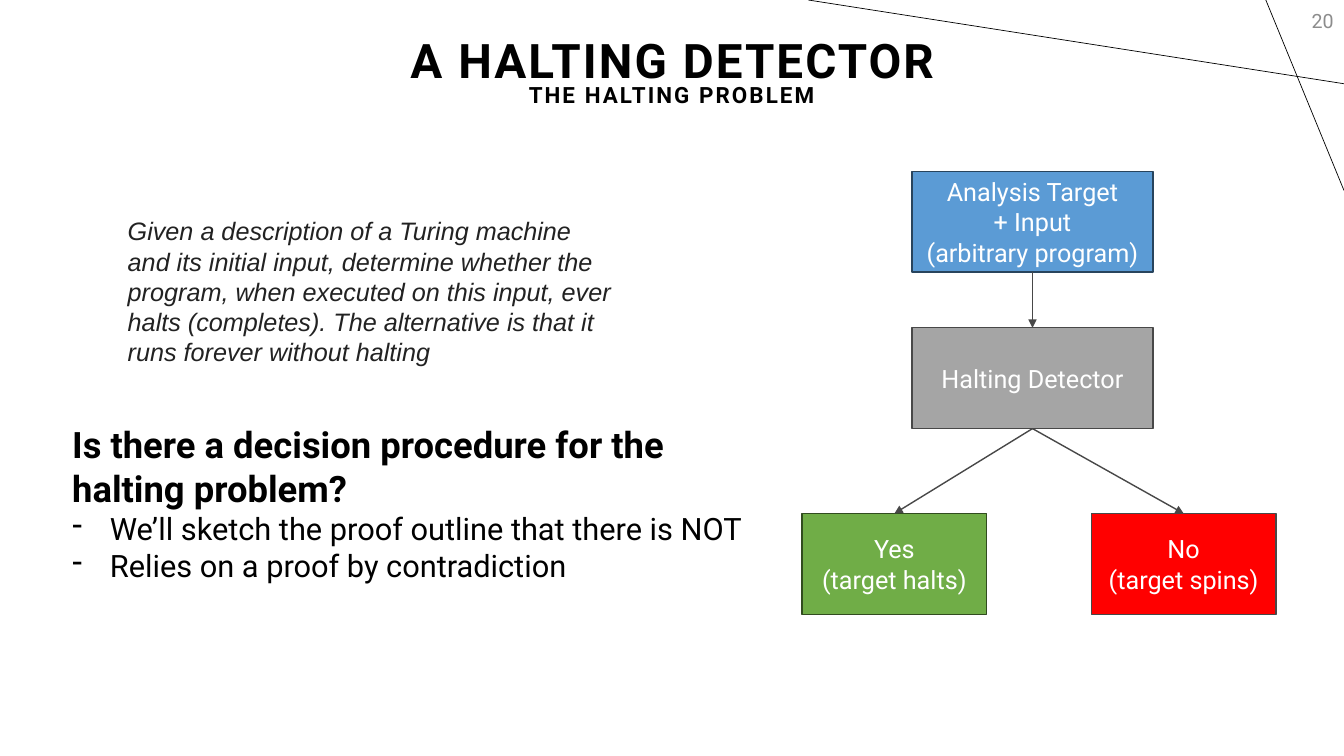
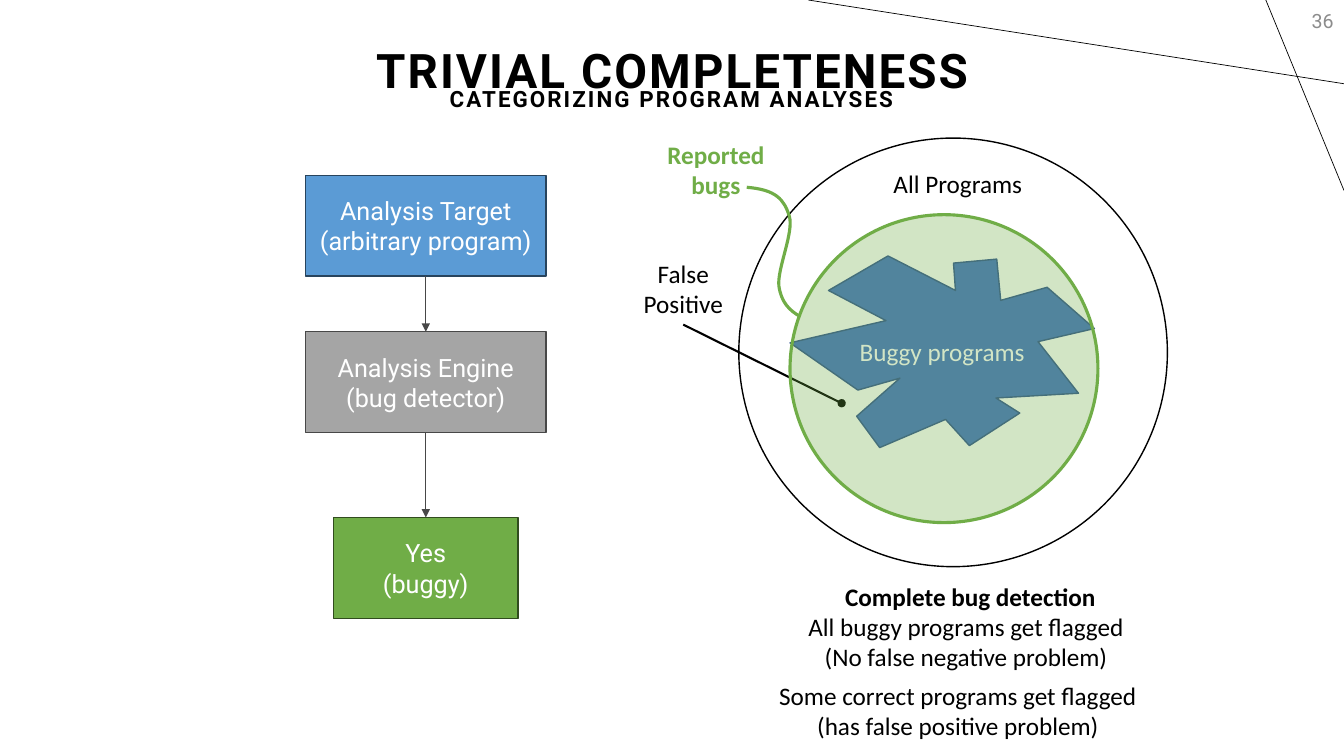
from dataclasses import dataclass

import lxml.etree
import pptx
import pptx.dml.color
import pptx.enum.shapes
import pptx.enum.text
import pptx.oxml.ns
import pptx.shapes.autoshape
import pptx.shapes.base
import pptx.shapes.connector
import pptx.slide
import pptx.text.text
import pptx.util

Cm = pptx.util.Cm
Pt = pptx.util.Pt
RGBColor = pptx.dml.color.RGBColor
Shape = pptx.shapes.autoshape.Shape
Connector = pptx.shapes.connector.Connector
Slide = pptx.slide.Slide
MSO_SHAPE = pptx.enum.shapes.MSO_SHAPE
ANCHOR = pptx.enum.text.MSO_ANCHOR
ALIGN = pptx.enum.text.PP_ALIGN
qn = pptx.oxml.ns.qn

# Colours
BLACK = RGBColor(0x00, 0x00, 0x00)
WHITE = RGBColor(0xFF, 0xFF, 0xFF)
NUMBER_GRAY = RGBColor(0x8C, 0x8C, 0x8C)
QUOTE_GRAY = RGBColor(0x22, 0x22, 0x22)
DARK_GRAY = RGBColor(0x48, 0x48, 0x48)
GRAY = RGBColor(0xA5, 0xA5, 0xA5)
BLUE = RGBColor(0x5B, 0x9B, 0xD5)
DARK_BLUE = RGBColor(0x28, 0x44, 0x5D)
GREEN = RGBColor(0x70, 0xAD, 0x47)
DARK_GREEN = RGBColor(0x31, 0x4C, 0x1F)
RED = RGBColor(0xFF, 0x00, 0x00)
BUG_BLUE = RGBColor(0x44, 0x72, 0xC4)
BUG_EDGE = RGBColor(0x32, 0x54, 0x91)

# Shared measures, in centimetres
PAGE_WIDTH, PAGE_HEIGHT = 33.87, 19.05
CORNER_LINES = [(33.87, 2.11, 20.37, 0), (31.9, 0, 33.87, 4.8)]
WIDE, NARROW, BOX_HEIGHT = 6.07, 4.65, 2.54
ROW_OFFSETS = (0, 3.94, 8.62)
BULLET_INDENT = 0.95

Point = tuple[float, float]


@dataclass(frozen=True)
class TextStyle:
    size: float
    font: str = "Roboto"
    color: RGBColor = BLACK
    bold: bool = False
    italic: bool = False
    align: ALIGN = ALIGN.LEFT
    spacing: float = 0
    line_spacing: float | None = None
    bullet: str = ""


@dataclass(frozen=True)
class BoxKind:
    fill: RGBColor
    edge: RGBColor
    width: float
    row: int


@dataclass(frozen=True)
class Label:
    left: float
    top: float
    width: float
    lines: tuple[str, ...]
    style: TextStyle


TITLE = TextStyle(34, bold=True, align=ALIGN.CENTER, spacing=1.5, line_spacing=0.9)
SUBTITLE = TextStyle(16, bold=True, align=ALIGN.CENTER, spacing=1.5, line_spacing=0.9)
NUMBER = TextStyle(14, color=NUMBER_GRAY, align=ALIGN.RIGHT)
BOX_TEXT = TextStyle(18, color=WHITE, align=ALIGN.CENTER)
QUOTE = TextStyle(18, "Arial", QUOTE_GRAY, italic=True)
QUESTION = TextStyle(26, bold=True)
ANSWER = TextStyle(22, bullet="-")
NOTE = TextStyle(18, "Calibri", align=ALIGN.CENTER)
NOTE_BOLD = TextStyle(18, "Calibri", bold=True, align=ALIGN.CENTER)
NOTE_GREEN = TextStyle(18, "Calibri", GREEN, bold=True, align=ALIGN.CENTER)
BUG_TEXT = TextStyle(18, "Calibri", WHITE, align=ALIGN.CENTER)

TARGET = BoxKind(BLUE, DARK_BLUE, WIDE, 0)
DETECTOR = BoxKind(GRAY, DARK_GRAY, WIDE, 1)
YES = BoxKind(GREEN, DARK_GREEN, NARROW, 2)
NO = BoxKind(RED, DARK_GRAY, NARROW, 2)

# Content of the program diagram
LABELS = [
    Label(22.25, 4.11, 3.78, ("All Programs",), NOTE),
    Label(20.96, 14.53, 6.99, ("Complete bug detection",), NOTE_BOLD),
    Label(16.56, 3.38, 2.97, ("Reported", "bugs"), NOTE_GREEN),
    Label(19.99, 15.27, 8.71,
          ("All buggy programs get flagged", "(No false negative problem)"), NOTE),
    Label(19.25, 17.02, 9.78,
          ("Some correct programs get flagged", "(has false positive problem)"), NOTE),
    Label(15.95, 6.38, 2.54, ("False", "Positive"), NOTE),
]
BUGGY_OUTLINE = [
    (24.08, 7.32), (22.38, 6.45), (20.88, 7.32), (22.33, 8.08), (19.91, 8.64),
    (21.62, 9.83), (22.68, 9.53), (21.59, 10.49), (22.17, 11.28), (23.83, 10.57),
    (24.43, 11.23), (25.7, 10.41), (25.1, 10.03), (27.18, 9.91), (26.16, 8.61),
    (27.58, 8.28), (26.39, 7.24), (25.22, 7.57), (25.12, 6.53), (24.03, 6.63),
]
REPORTED_CURVE = [
    (18.82, 4.72),
    (19.56, 4.78), (19.76, 5.03), (19.89, 5.44),
    (20.02, 5.84), (19.58, 6.78), (19.63, 7.21),
    (19.69, 7.62), (19.89, 7.82), (20.17, 7.98),
]


# Text
def style_paragraph(para: pptx.text.text._Paragraph, style: TextStyle) -> None:
    para.alignment = style.align
    if style.line_spacing:
        para.line_spacing = style.line_spacing
    properties = para._p.get_or_add_pPr()
    if style.bullet:
        indent = Cm(BULLET_INDENT)
        properties.set("marL", str(indent))
        properties.set("indent", str(-indent))
        lxml.etree.SubElement(properties, qn("a:buChar")).set("char", style.bullet)
    font = para.font
    font.name, font.size = style.font, Pt(style.size)
    font.bold, font.italic = style.bold, style.italic
    font.color.rgb = style.color
    if style.spacing:
        properties.find(qn("a:defRPr")).set("spc", str(round(style.spacing * 100)))


def write(shape: Shape, lines: list[tuple[str, TextStyle]],
          anchor: ANCHOR = ANCHOR.MIDDLE, wrap: bool = True) -> None:
    frame = shape.text_frame
    frame.word_wrap = wrap
    frame.vertical_anchor = anchor
    for index, (text, style) in enumerate(lines):
        para = frame.add_paragraph() if index else frame.paragraphs[0]
        para.add_run().text = text
        style_paragraph(para, style)


def add_text(page: Slide, left: float, top: float, width: float, height: float,
             lines: list[tuple[str, TextStyle]], anchor: ANCHOR = ANCHOR.TOP,
             wrap: bool = True) -> None:
    box = page.shapes.add_textbox(Cm(left), Cm(top), Cm(width), Cm(height))
    write(box, lines, anchor, wrap)


# Shapes and lines
def paint(shape: Shape, fill: RGBColor | None, edge: RGBColor, weight: float) -> None:
    shape.shadow.inherit = False
    if fill is None:
        shape.fill.background()
    else:
        shape.fill.solid()
        shape.fill.fore_color.rgb = fill
    shape.line.color.rgb = edge
    shape.line.width = Pt(weight)


def add_line(page: Slide, ends: tuple[float, float, float, float], color: RGBColor,
             weight: float, tail: str = "") -> Connector:
    line = page.shapes.add_connector(
        pptx.enum.shapes.MSO_CONNECTOR.STRAIGHT, *(Cm(end) for end in ends))
    line.line.color.rgb = color
    line.line.width = Pt(weight)
    if tail:
        outline = line.line._get_or_add_ln()
        lxml.etree.SubElement(outline, qn("a:tailEnd")).set("type", tail)
    lxml.etree.SubElement(line._element.spPr, qn("a:effectLst"))
    return line


def add_box(page: Slide, kind: BoxKind, center: float, top: float, *lines: str) -> Shape:
    box = page.shapes.add_shape(
        MSO_SHAPE.RECTANGLE, Cm(center - kind.width / 2),
        Cm(top + ROW_OFFSETS[kind.row]), Cm(kind.width), Cm(BOX_HEIGHT))
    paint(box, kind.fill, kind.edge, 1)
    write(box, [(line, BOX_TEXT) for line in lines])
    return box


def add_arrow(page: Slide, source: Shape, goal: Shape) -> None:
    arrow = add_line(page, (0, 0, 1, 1), DARK_GRAY, 1, "triangle")
    arrow.begin_connect(source, 2)
    arrow.end_connect(goal, 0)


def add_ellipse(page: Slide, left: float, top: float, size: float, fill: RGBColor,
                edge: RGBColor, weight: float, opacity: int = 100) -> None:
    ellipse = page.shapes.add_shape(
        MSO_SHAPE.OVAL, Cm(left), Cm(top), Cm(size), Cm(size))
    paint(ellipse, fill, edge, weight)
    if opacity < 100:
        color = ellipse._element.spPr.find(qn("a:solidFill")).find(qn("a:srgbClr"))
        lxml.etree.SubElement(color, qn("a:alpha")).set("val", str(opacity * 1000))


def add_outline(page: Slide, points: list[Point], close: bool) -> Shape:
    start, *rest = [(Cm(x), Cm(y)) for x, y in points]
    builder = page.shapes.build_freeform(*start)
    builder.add_line_segments(rest, close=close)
    return builder.convert_to_shape()


def add_curve(page: Slide, points: list[Point], color: RGBColor, weight: float) -> None:
    curve = add_outline(page, points, close=False)
    # Each three line steps become one Bezier step
    steps = list(curve._element.iter(qn("a:lnTo")))
    for first in range(0, len(steps), 3):
        trio = steps[first:first + 3]
        bezier = lxml.etree.Element(qn("a:cubicBezTo"))
        trio[0].addprevious(bezier)
        for step in trio:
            bezier.append(step[0])
            step.getparent().remove(step)
    paint(curve, None, color, weight)


# Slides
def add_page(deck: pptx.presentation.Presentation, number: str, title: str, title_top: float,
             subtitle: str, subtitle_top: float) -> Slide:
    page = deck.slides.add_slide(deck.slide_layouts[6])
    for ends in CORNER_LINES:
        add_line(page, ends, BLACK, 0.5)
    add_text(page, 0.05, title_top, 33.8, 3.68, [(title, TITLE)], ANCHOR.MIDDLE)
    add_text(page, 26.24, 0, 7.62, 1.02, [(number, NUMBER)], ANCHOR.MIDDLE)
    add_text(page, 0.03, subtitle_top, 33.8, 3.68, [(subtitle, SUBTITLE)], ANCHOR.MIDDLE)
    return page


def build_halting_page(deck: pptx.presentation.Presentation) -> None:
    page = add_page(deck, "20", "A HALTING DETECTOR", -0.25, "THE HALTING PROBLEM", 0.58)
    add_text(page, 2.97, 5.31, 12.7, 4.11, [
        ("Given a description of a Turing machine and its initial input, determine "
         "whether the program, when executed on this input, ever halts (completes). "
         "The alternative is that it runs forever without halting", QUOTE)])
    add_text(page, 1.57, 10.52, 17.53, 4.37, [
        ("Is there a decision procedure for the halting problem?", QUESTION),
        ("We’ll sketch the proof outline that there is NOT", ANSWER),
        ("Relies on a proof by contradiction", ANSWER)])

    # Flow chart
    center, top = 26.02, 4.32
    target = add_box(page, TARGET, center, top,
                     "Analysis Target", "+ Input", "(arbitrary program)")
    detector = add_box(page, DETECTOR, center, top, "Halting Detector")
    halts = add_box(page, YES, 22.54, top, "Yes", "(target halts)")
    spins = add_box(page, NO, 29.83, top, "No", "(target spins)")
    for source, goal in ((target, detector), (detector, halts), (detector, spins)):
        add_arrow(page, source, goal)


def build_completeness_page(deck: pptx.presentation.Presentation) -> None:
    page = add_page(deck, "36", "TRIVIAL COMPLETENESS", 0,
                    "CATEGORIZING PROGRAM ANALYSES", 0.69)

    # Flow chart
    center, top = 10.73, 4.42
    target = add_box(page, TARGET, center, top, "Analysis Target", "(arbitrary program)")
    engine = add_box(page, DETECTOR, center, top, "Analysis Engine", "(bug detector)")
    buggy = add_box(page, YES, center, top, "Yes", "(buggy)")
    add_arrow(page, target, engine)
    add_arrow(page, engine, buggy)

    # Program sets
    add_ellipse(page, 18.62, 3.48, 10.8, WHITE, BLACK, 1)
    for label in LABELS:
        add_text(page, label.left, label.top, label.width, 0.26 + 0.77 * len(label.lines),
                 [(line, label.style) for line in label.lines], wrap=False)
    add_line(page, (17.22, 8.18, 21.21, 10.16), BLACK, 1.5, "oval")
    bugs = add_outline(page, BUGGY_OUTLINE, close=True)
    paint(bugs, BUG_BLUE, BUG_EDGE, 1)
    write(bugs, [("Buggy programs", BUG_TEXT)])
    add_curve(page, REPORTED_CURVE, GREEN, 2.25)
    add_ellipse(page, 19.91, 5.41, 7.76, GREEN, GREEN, 2.25, opacity=31)


def main() -> None:
    deck = pptx.Presentation()
    deck.slide_width, deck.slide_height = Cm(PAGE_WIDTH), Cm(PAGE_HEIGHT)
    build_halting_page(deck)
    build_completeness_page(deck)
    deck.save("out.pptx")


if __name__ == "__main__":
    main()
